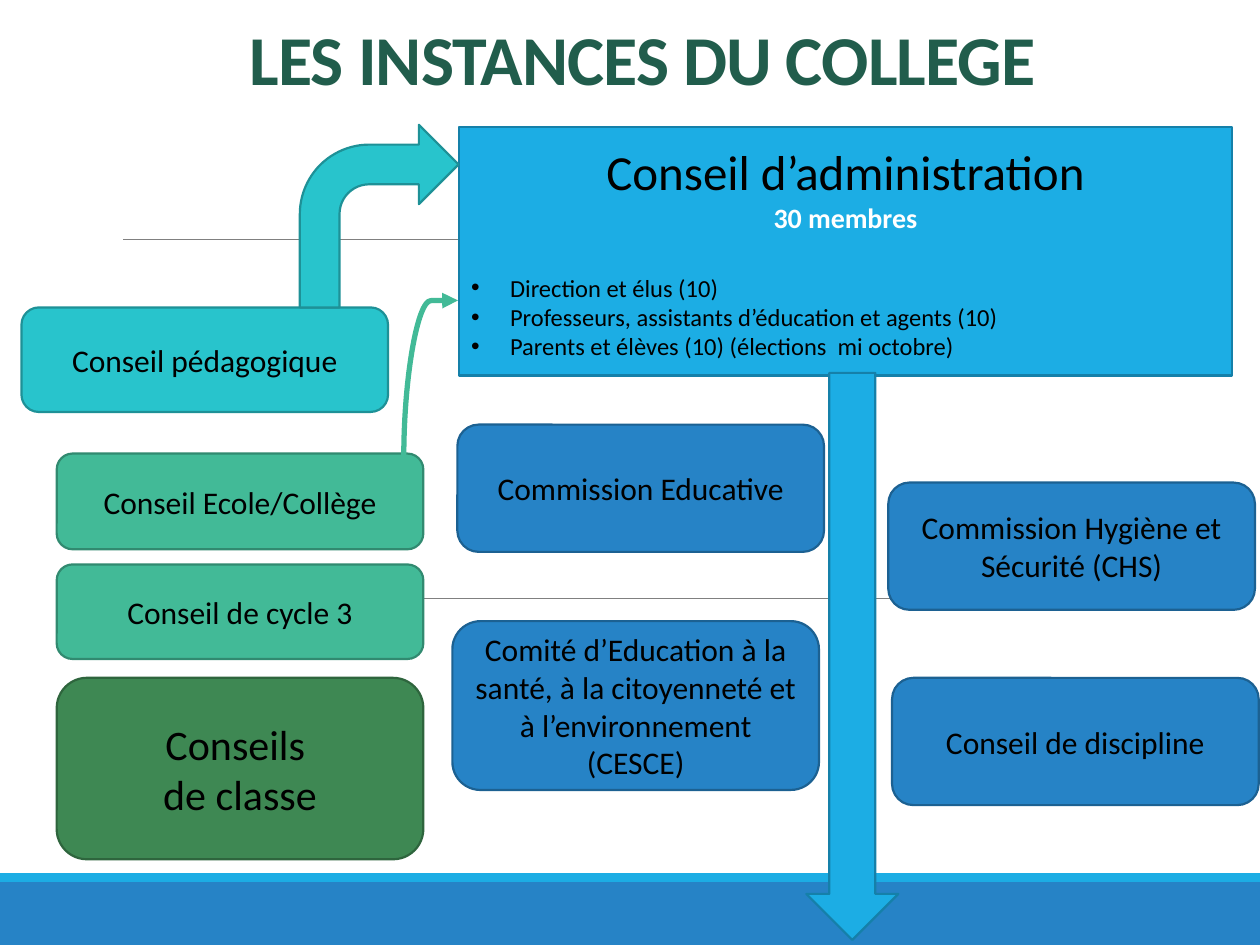
"""Build the slide showing the governing bodies of a collège."""

from typing import NamedTuple

from lxml.etree import SubElement
from pptx import Presentation
from pptx.dml.color import RGBColor
from pptx.enum.shapes import MSO_CONNECTOR, MSO_SHAPE
from pptx.enum.text import MSO_ANCHOR, PP_ALIGN
from pptx.oxml.ns import qn
from pptx.util import Inches, Pt

FONT = "Calibri"
BLACK = RGBColor(0x00, 0x00, 0x00)
WHITE = RGBColor(0xFF, 0xFF, 0xFF)
GRAY = RGBColor(0x80, 0x80, 0x80)
TITLE_GREEN = RGBColor(0x21, 0x5D, 0x4C)
BOX_WIDTH = 2.91


class Palette(NamedTuple):
    fill: RGBColor
    line: RGBColor | None = None


class Box(NamedTuple):
    left: float
    top: float
    height: float
    palette: Palette
    lines: list[str]
    size: int = 18


SKY = Palette(RGBColor(0x1C, 0xAD, 0xE4), RGBColor(0x15, 0x80, 0xA9))
BLUE = Palette(RGBColor(0x26, 0x83, 0xC6), RGBColor(0x1C, 0x61, 0x92))
TURQUOISE = Palette(RGBColor(0x28, 0xC4, 0xCC), RGBColor(0x1E, 0x91, 0x97))
MINT = Palette(RGBColor(0x42, 0xBA, 0x97), RGBColor(0x31, 0x8A, 0x70))
GREEN = Palette(RGBColor(0x3E, 0x88, 0x53), RGBColor(0x2E, 0x65, 0x3D))

BOXES = [
    Box(0.17, 2.44, 0.83, TURQUOISE, ["Conseil pédagogique"]),
    Box(0.45, 3.6, 0.76, MINT, ["Conseil Ecole/Collège"]),
    Box(7.08, 5.38, 1.01, BLUE, ["Conseil de discipline"]),
    Box(3.59, 4.93, 1.34, BLUE,
        ["Comité d’Education à la santé, à la citoyenneté et à l’environnement (CESCE)"]),
    Box(3.63, 3.37, 1.01, BLUE, ["Commission Educative"]),
    Box(0.45, 4.48, 0.75, MINT, ["Conseil de cycle 3"]),
    Box(7.05, 3.83, 1.01, BLUE, ["Commission Hygiène et Sécurité (CHS)"]),
    Box(0.45, 5.38, 1.44, GREEN, ["Conseils ", "de classe"], 24),
]
MEMBERS = [
    "Direction et élus (10)",
    "Professeurs, assistants d’éducation et agents (10)",
    "Parents et élèves (10) (élections  mi octobre)",
]


def add_filled_shape(slide, kind: MSO_SHAPE, left: float, top: float,
                     width: float, height: float, palette: Palette):
    shape = slide.shapes.add_shape(
        kind, Inches(left), Inches(top), Inches(width), Inches(height))
    shape.shadow.inherit = False
    shape.fill.solid()
    shape.fill.fore_color.rgb = palette.fill
    if palette.line is None:
        shape.line.fill.background()
    else:
        shape.line.color.rgb = palette.line
        shape.line.width = Pt(1.25)
    return shape


def add_line(slide, kind: MSO_CONNECTOR, start: tuple[float, float],
             end: tuple[float, float], color: RGBColor, width: float):
    connector = slide.shapes.add_connector(
        kind, *(Inches(value) for value in (*start, *end)))
    connector.line.color.rgb = color
    connector.line.width = Pt(width)
    SubElement(connector._element.spPr, qn("a:effectLst"))
    return connector


def format_paragraph(paragraph, size: float, color: RGBColor = BLACK,
                     bold: bool = False,
                     alignment: PP_ALIGN = PP_ALIGN.CENTER) -> None:
    paragraph.alignment = alignment
    for run in paragraph.runs:
        run.font.name = FONT
        run.font.size = Pt(size)
        run.font.bold = bold
        run.font.color.rgb = color


def add_bullet(paragraph) -> None:
    properties = paragraph._p.get_or_add_pPr()
    properties.set("marL", str(Inches(0.31)))
    properties.set("indent", str(Inches(-0.31)))
    SubElement(properties, qn("a:buFont"), typeface="Arial")
    SubElement(properties, qn("a:buChar"), char="•")


def add_title(slide) -> None:
    title = slide.shapes.title
    title.left, title.top = Inches(1.63), Inches(0.03)
    title.width, title.height = Inches(6.94), Inches(0.81)
    frame = title.text_frame
    frame.text = "LES INSTANCES DU COLLEGE"
    frame.vertical_anchor = MSO_ANCHOR.BOTTOM
    paragraph = frame.paragraphs[0]
    format_paragraph(paragraph, 40, TITLE_GREEN, bold=True)
    paragraph.line_spacing = 0.85
    paragraph.runs[0].font._element.set("spc", "-50")


def add_board(slide) -> None:
    board = add_filled_shape(
        slide, MSO_SHAPE.FLOWCHART_PROCESS, 3.64, 1.01, 6.14, 1.97, SKY)
    frame = board.text_frame
    frame.text = "\n".join(["Conseil d’administration", "30 membres", *MEMBERS])
    frame.vertical_anchor = MSO_ANCHOR.MIDDLE
    heading, count, *members = frame.paragraphs
    format_paragraph(heading, 28)
    format_paragraph(count, 16, WHITE, bold=True)
    members[0].space_before = Pt(22)
    for member in members:
        format_paragraph(member, 14, alignment=PP_ALIGN.LEFT)
        add_bullet(member)


def add_box(slide, box: Box) -> None:
    shape = add_filled_shape(slide, MSO_SHAPE.ROUNDED_RECTANGLE, box.left,
                             box.top, BOX_WIDTH, box.height, box.palette)
    frame = shape.text_frame
    frame.text = "\n".join(box.lines)
    frame.vertical_anchor = MSO_ANCHOR.MIDDLE
    for paragraph in frame.paragraphs:
        format_paragraph(paragraph, box.size)


def add_curved_arrow(slide) -> None:
    arrow = add_line(slide, MSO_CONNECTOR.CURVE, (4.04, 3.22), (2.8, 2.79),
                     MINT.fill, 3)
    properties = arrow._element.spPr
    properties.find(qn("a:xfrm")).set("rot", str(90 * 60000))
    guides = properties.find(qn("a:prstGeom")).get_or_add_avLst()
    SubElement(guides, qn("a:gd"), name="adj1", fmla="val 99900")
    SubElement(arrow.line._get_or_add_ln(), qn("a:tailEnd"), type="triangle")


def main() -> None:
    presentation = Presentation()
    presentation.slide_width = Inches(10)
    presentation.slide_height = Inches(7.5)
    slide = presentation.slides.add_slide(presentation.slide_layouts[5])

    add_title(slide)
    add_line(slide, MSO_CONNECTOR.STRAIGHT, (0.98, 1.9), (9.15, 1.9), GRAY, 0.5)
    add_filled_shape(slide, MSO_SHAPE.RECTANGLE, 0, 7, 10, 0.5, Palette(BLUE.fill))
    add_filled_shape(slide, MSO_SHAPE.RECTANGLE, 0, 6.93, 10, 0.07, Palette(SKY.fill))
    add_line(slide, MSO_CONNECTOR.STRAIGHT, (0.99, 4.75), (9.09, 4.75), GRAY, 0.5)
    add_board(slide)
    for box in BOXES:
        add_box(slide, box)
    add_filled_shape(slide, MSO_SHAPE.BENT_ARROW, 2.38, 0.99, 1.26, 1.45, TURQUOISE)
    add_curved_arrow(slide)
    add_filled_shape(slide, MSO_SHAPE.DOWN_ARROW, 6.4, 2.96, 0.73, 4.5, SKY)
    presentation.save("out.pptx")


if __name__ == "__main__":
    main()
